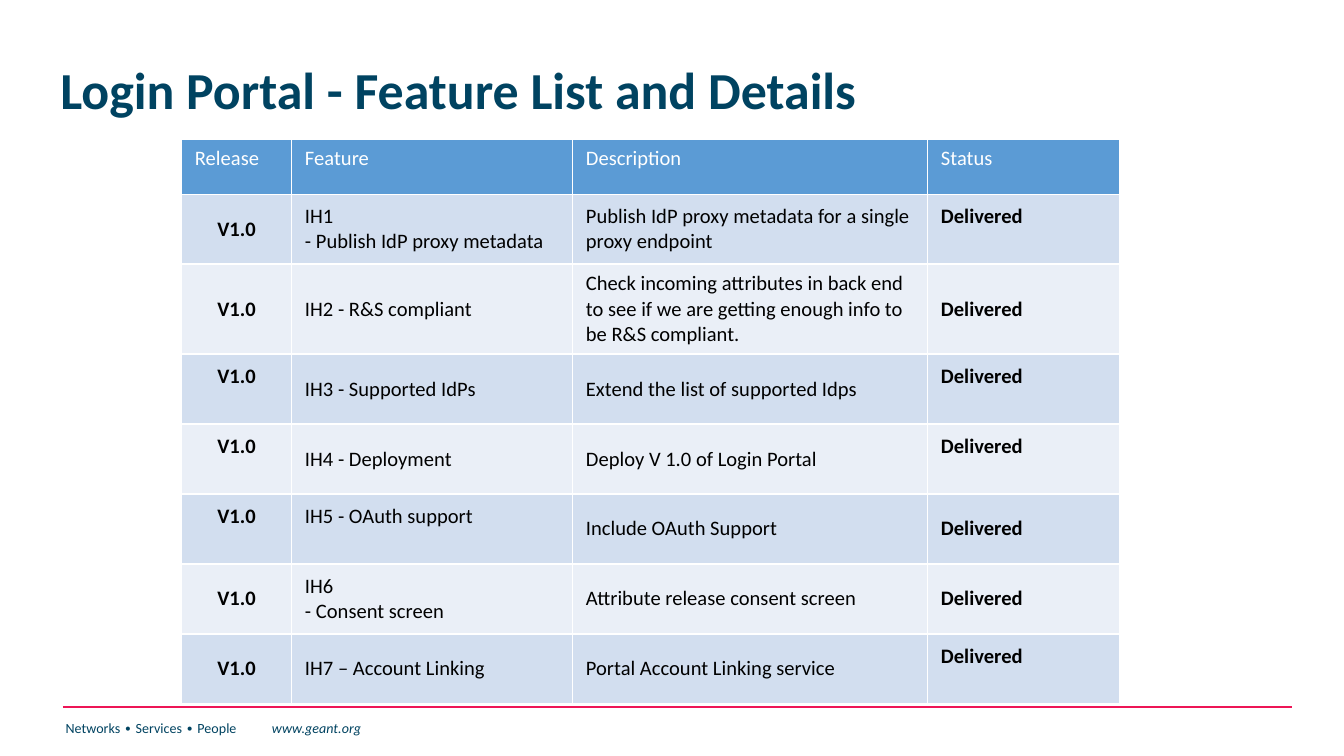
from lxml.etree import SubElement
from pptx import Presentation
from pptx.dml.color import RGBColor
from pptx.enum.shapes import MSO_CONNECTOR as Connector
from pptx.enum.text import MSO_ANCHOR as Anchor, PP_ALIGN as Align
from pptx.oxml.ns import qn
from pptx.util import Cm, Pt

NAVY, CRIMSON, WHITE, BLACK = "004361", "ED1556", "FFFFFF", "000000"
HEADER_BLUE, BANDS = "5B9BD5", ("D2DEEF", "EAEFF7")
WIDTHS = (2.08, 5.31, 6.71, 3.63)
HEADINGS = ("Release", "Feature", "Description", "Status")
RELEASE, STATUS = "V1.0", "Delivered"
FEATURES = (
    ("IH1\n- Publish IdP proxy metadata",
     "Publish IdP proxy metadata for a single proxy endpoint"),
    ("IH2 - R&S compliant",
     "Check incoming attributes in back end to see if we are getting "
     "enough info to be R&S compliant."),
    ("IH3 - Supported IdPs", "Extend the list of supported Idps"),
    ("IH4 - Deployment", "Deploy V 1.0 of Login Portal"),
    ("IH5 - OAuth support", "Include OAuth Support"),
    ("IH6\n- Consent screen", "Attribute release consent screen"),
    ("IH7 – Account Linking", "Portal Account Linking service"),
)
RAISED = {(3, 0), (4, 0), (5, 0), (5, 1), (1, 3), (3, 3), (4, 3), (7, 3)}


def rgb(value):
    return RGBColor.from_string(value)


def write(paragraph, text, *, size=11, color=BLACK, bold=False,
          italic=False, align=Align.LEFT, font="Calibri"):
    paragraph.alignment = align
    run = paragraph.add_run()
    run.text = text
    run.font.name, run.font.size = font, Pt(size)
    run.font.bold, run.font.italic = bold, italic
    run.font.color.rgb = rgb(color)


class FeatureSlide:
    def __init__(self, deck):
        self.slide = deck.slides.add_slide(deck.slide_layouts[6])
        self.slide.background.fill.solid()
        self.slide.background.fill.fore_color.rgb = rgb(WHITE)

    def text_box(self, left, top, width, height, anchor=Anchor.TOP):
        frame = self.slide.shapes.add_textbox(
            Cm(left), Cm(top), Cm(width), Cm(height)).text_frame
        frame.word_wrap = True
        frame.vertical_anchor = anchor
        return frame.paragraphs[0]

    def title(self, text):
        heading = self.text_box(0.89, 0.74, 20.02, 2.03, Anchor.MIDDLE)
        heading.line_spacing = 0.9
        write(heading, text, size=27.8, color=NAVY, bold=True)

    def rule(self, left, right, y):
        rule = self.slide.shapes.add_connector(
            Connector.STRAIGHT, Cm(left), Cm(y), Cm(right), Cm(y))
        rule.line.color.rgb = rgb(CRIMSON)
        rule.line.width = Pt(1)
        SubElement(rule._element.spPr, qn("a:effectLst"))

    def footer(self, motto, address):
        line = self.text_box(0.99, 13.46, 8.66, 0.89)
        tabs = SubElement(line._p.get_or_add_pPr(), qn("a:tabLst"))
        SubElement(tabs, qn("a:tab"), pos=str(Cm(3.9)), algn="l")
        write(line, motto + "\t", size=7.5, color=NAVY)
        write(line, address, size=7.5, color=NAVY, italic=True)

    def cell(self, cell, text, fill, anchor=Anchor.MIDDLE, raised=False, **style):
        properties = cell._tc.get_or_add_tcPr()
        for side in "LRTB":
            border = SubElement(properties, qn(f"a:ln{side}"), w=str(Pt(1)))
            paint = SubElement(border, qn("a:solidFill"))
            SubElement(paint, qn("a:srgbClr"), val=WHITE)
        cell.fill.solid()
        cell.fill.fore_color.rgb = rgb(fill)
        cell.vertical_anchor = anchor
        if raised:
            cell.margin_bottom = Cm(0.6)
        frame = cell.text_frame
        for index, line in enumerate(text.split("\n")):
            paragraph = frame.add_paragraph() if index else frame.paragraphs[0]
            write(paragraph, line, **style)

    def feature_table(self, left, top):
        heights = [1.04] + [1.32] * len(FEATURES)
        heights[2] = 1.7
        table = self.slide.shapes.add_table(
            len(heights), len(WIDTHS), Cm(left), Cm(top),
            Cm(sum(WIDTHS)), Cm(sum(heights))).table
        table.first_row = table.horz_banding = False
        for column, width in zip(table.columns, WIDTHS):
            column.width = Cm(width)
        for row, height in zip(table.rows, heights):
            row.height = Cm(height)
        for column, heading in enumerate(HEADINGS):
            self.cell(table.cell(0, column), heading, HEADER_BLUE,
                      Anchor.TOP, color=WHITE)
        for row, feature in enumerate(FEATURES, 1):
            for column, text in enumerate((RELEASE, *feature, STATUS)):
                self.cell(table.cell(row, column), text, BANDS[(row - 1) % 2],
                          raised=(row, column) in RAISED,
                          bold=column in (0, 3),
                          align=Align.LEFT if column else Align.CENTER)


def main():
    deck = Presentation()
    deck.slide_width, deck.slide_height = Cm(25.4), Cm(14.28)
    page = FeatureSlide(deck)
    page.rule(1.19, 24.41, 13.36)
    page.footer("Networks ∙ Services ∙ People", "www.geant.org")
    page.title("Login Portal - Feature List and Details")
    page.feature_table(3.43, 2.63)
    deck.save("out.pptx")


if __name__ == "__main__":
    main()
